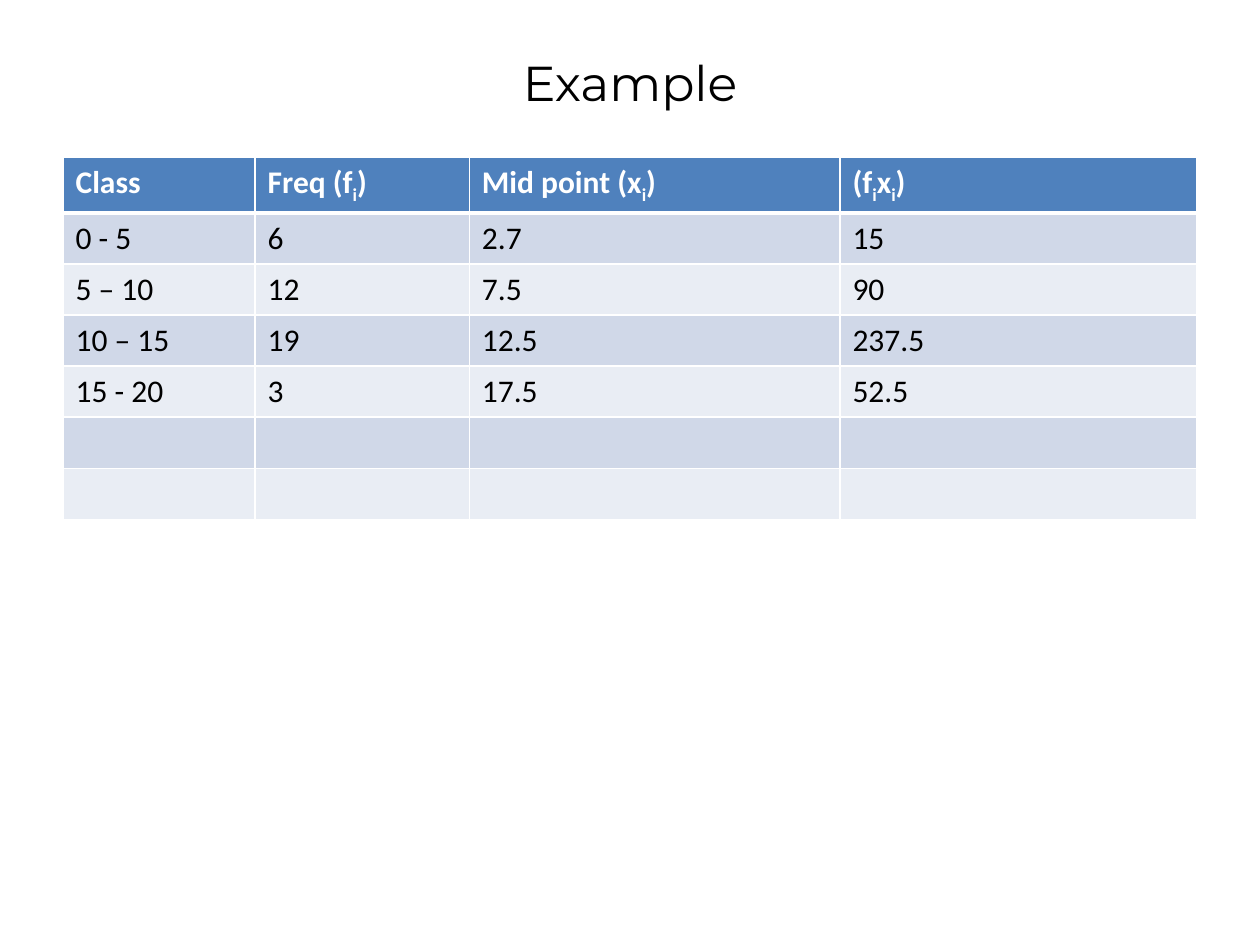
from lxml.etree import SubElement
from pptx import Presentation
from pptx.dml.color import RGBColor
from pptx.enum.text import MSO_ANCHOR, PP_ALIGN
from pptx.oxml.ns import qn
from pptx.util import Pt

# Content: an underscore marks the next letter as a subscript
TITLE = "Example"
HEADER = ["Class", "Freq (f_i)", "Mid point (x_i)", "(f_ix_i)"]
CLASSES = [
    ["0 - 5", "6", "2.7", "15"],
    ["5 – 10", "12", "7.5", "90"],
    ["10 – 15", "19", "12.5", "237.5"],
    ["15 - 20", "3", "17.5", "52.5"],
]
EMPTY_ROWS = 2

# Colours
BLACK = RGBColor(0x00, 0x00, 0x00)
WHITE = RGBColor(0xFF, 0xFF, 0xFF)
HEADER_BLUE = RGBColor(0x4F, 0x81, 0xBD)
BANDS = [RGBColor(0xD0, 0xD8, 0xE8), RGBColor(0xE9, 0xED, 0xF4)]

# Layout in points
LEFT, WIDTH = 36, 648
TITLE_TOP, TITLE_HEIGHT = 21.6, 50.4
TABLE_TOP, ROW_HEIGHT = 90, 29.2
COLUMN_WIDTHS = [109.8, 122.4, 211.8, 204]
THIN, THICK = 1, 3

TITLE_FONT = {"name": "Montserrat", "size": Pt(28), "bold": False}
HEADER_FONT = {"name": "Calibri", "size": Pt(18), "bold": True}
BODY_FONT = HEADER_FONT | {"bold": False}


def format_font(font, formats, color):
    for attribute, value in formats.items():
        setattr(font, attribute, value)
    font.color.rgb = color


def write(paragraph, text, formats, color):
    """Add text as runs, with each letter after an underscore lowered."""
    first, *rest = text.split("_")
    pieces = [(first, False)]
    for part in rest:
        pieces += [(part[0], True), (part[1:], False)]
    for piece, lowered in pieces:
        if piece:
            run = paragraph.add_run()
            run.text = piece
            format_font(run.font, formats, color)
            if lowered:
                run.font._element.set("baseline", "-25000")


def add_borders(cell, widths):
    properties = cell._tc.get_or_add_tcPr()
    for side, width in widths.items():
        line = SubElement(properties, qn(f"a:ln{side}"), w=str(Pt(width)))
        fill = SubElement(line, qn("a:solidFill"))
        SubElement(fill, qn("a:srgbClr"), val=str(WHITE))


presentation = Presentation()
presentation.slide_width, presentation.slide_height = Pt(720), Pt(540)
slide = presentation.slides.add_slide(presentation.slide_layouts[5])

# Title
title = slide.shapes.title
title.left, title.top = Pt(LEFT), Pt(TITLE_TOP)
title.width, title.height = Pt(WIDTH), Pt(TITLE_HEIGHT)
title.text_frame.vertical_anchor = MSO_ANCHOR.MIDDLE
heading = title.text_frame.paragraphs[0]
heading.alignment = PP_ALIGN.CENTER
write(heading, TITLE, TITLE_FONT, BLACK)

# Frequency table
rows = [HEADER] + CLASSES + [[""] * len(HEADER)] * EMPTY_ROWS
table = slide.shapes.add_table(
    len(rows), len(HEADER), Pt(LEFT), Pt(TABLE_TOP),
    Pt(WIDTH), Pt(ROW_HEIGHT * len(rows))).table
for column, width in zip(table.columns, COLUMN_WIDTHS):
    column.width = Pt(width)

for r, row in enumerate(rows):
    table.rows[r].height = Pt(ROW_HEIGHT)
    is_header = r == 0
    formats, color = (HEADER_FONT, WHITE) if is_header else (BODY_FONT, BLACK)
    borders = {"L": THIN, "R": THIN,
               "T": THICK if r == 1 else THIN,
               "B": THICK if is_header else THIN}
    for c, text in enumerate(row):
        cell = table.cell(r, c)
        add_borders(cell, borders)
        cell.fill.solid()
        cell.fill.fore_color.rgb = HEADER_BLUE if is_header else BANDS[(r - 1) % 2]
        write(cell.text_frame.paragraphs[0], text, formats, color)

presentation.save("out.pptx")
